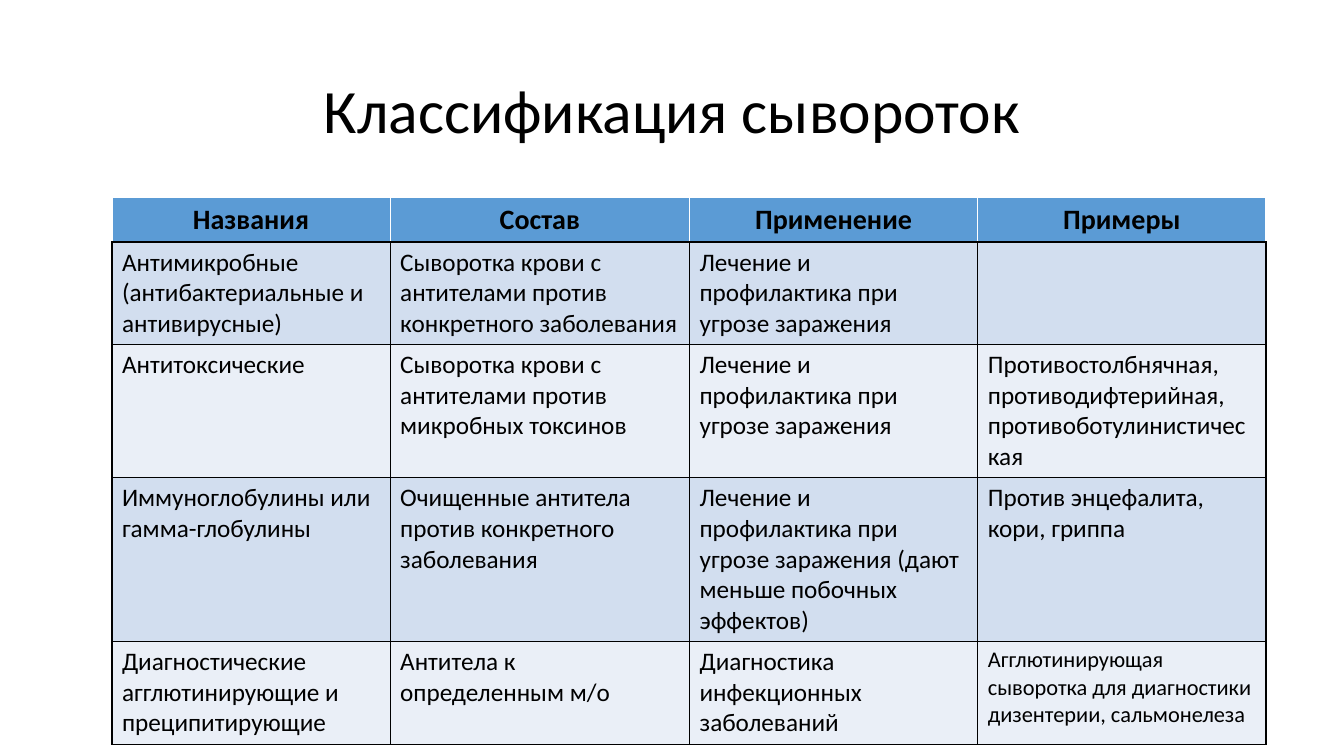
from lxml import etree
from pptx import Presentation
from pptx.dml.color import RGBColor
from pptx.enum.text import MSO_ANCHOR, PP_ALIGN
from pptx.oxml.ns import qn
from pptx.util import Inches, Pt

CENTER, LEFT = PP_ALIGN.CENTER, PP_ALIGN.LEFT
MIDDLE = MSO_ANCHOR.MIDDLE
BLACK = RGBColor(0x00, 0x00, 0x00)
WHITE = RGBColor(0xFF, 0xFF, 0xFF)
HEADER_BLUE = RGBColor(0x5B, 0x9B, 0xD5)
BAND_DARK = RGBColor(0xD2, 0xDE, 0xEF)
BAND_LIGHT = RGBColor(0xEA, 0xEF, 0xF7)

TITLE_LAYOUT = 5
GRID_COLUMNS, GRID_ROWS = 100, 75
COLUMN_WIDTHS = [20.7, 22.28, 21.45, 21.45]
ROW_HEIGHTS = [4.4, 10.1, 13.2, 16.2, 10.2]
SERUMS = [
    ["Названия", "Состав", "Применение", "Примеры"],
    ["Антимикробные (антибактериальные и антивирусные)",
     "Сыворотка крови с антителами против конкретного заболевания",
     "Лечение и профилактика при угрозе заражения", ""],
    ["Антитоксические",
     "Сыворотка крови с антителами против микробных токсинов",
     "Лечение и профилактика при угрозе заражения",
     "Противостолбнячная, противодифтерийная, противоботулинистическая"],
    ["Иммуноглобулины или гамма-глобулины",
     "Очищенные антитела против конкретного заболевания",
     "Лечение и профилактика при угрозе заражения (дают меньше побочных эффектов)",
     "Против энцефалита, кори, гриппа"],
    ["Диагностические агглютинирующие и преципитирующие",
     "Антитела к определенным м/о",
     "Диагностика инфекционных заболеваний",
     "Агглютинирующая сыворотка для диагностики дизентерии, сальмонелеза"],
]
SMALL_CELL = (4, 3)


class SlideBuilder:
    """Holds the slide, its grid and the text style."""

    def __init__(self, presentation):
        self.slide = presentation.slides.add_slide(presentation.slide_layouts[TITLE_LAYOUT])
        self.column = presentation.slide_width / GRID_COLUMNS
        self.row = presentation.slide_height / GRID_ROWS
        self.style = {"name": "Calibri", "size": Pt(18), "bold": False}

    def area(self, left, top, width, height):
        """Turn grid units into slide lengths."""
        return (round(left * self.column), round(top * self.row),
                round(width * self.column), round(height * self.row))

    def set_text(self, frame, text, alignment, **changes):
        frame.text = text
        paragraph = frame.paragraphs[0]
        paragraph.alignment = alignment
        font = paragraph.runs[0].font if paragraph.runs else paragraph.font
        for name, value in {**self.style, **changes}.items():
            setattr(font, name, value)
        font.color.rgb = BLACK

    def title(self, text, *place):
        title = self.slide.shapes.title
        for name, value in zip(("left", "top", "width", "height"), self.area(*place)):
            setattr(title, name, value)
        title.text_frame.vertical_anchor = MIDDLE
        self.set_text(title.text_frame, text, CENTER, size=Pt(44))
        title.text_frame.paragraphs[0].line_spacing = 0.9

    def borders(self, cell, side_color, bottom_color):
        properties = cell._tc.get_or_add_tcPr()
        colors = {"L": side_color, "R": side_color, "T": side_color, "B": bottom_color}
        for position, (side, color) in enumerate(colors.items()):
            line = etree.Element(qn(f"a:ln{side}"), w=str(Pt(1)))
            fill = etree.SubElement(line, qn("a:solidFill"))
            etree.SubElement(fill, qn("a:srgbClr"), val=str(color))
            properties.insert(position, line)

    def table(self, rows, left, top):
        place = self.area(left, top, sum(COLUMN_WIDTHS), sum(ROW_HEIGHTS))
        table = self.slide.shapes.add_table(len(rows), len(rows[0]), *place).table
        for column, width in zip(table.columns, COLUMN_WIDTHS):
            column.width = round(width * self.column)
        for row_index, (row, height) in enumerate(zip(table.rows, ROW_HEIGHTS)):
            row.height = round(height * self.row)
            for column_index, cell in enumerate(row.cells):
                self.cell(cell, rows[row_index][column_index], row_index, column_index)

    def cell(self, cell, text, row_index, column_index):
        cell.fill.solid()
        if row_index == 0:
            cell.fill.fore_color.rgb = HEADER_BLUE
            self.set_text(cell.text_frame, text, CENTER, size=Pt(20), bold=True)
            self.borders(cell, WHITE, BLACK)
        else:
            cell.fill.fore_color.rgb = BAND_DARK if row_index % 2 else BAND_LIGHT
            size = Pt(16) if (row_index, column_index) == SMALL_CELL else Pt(18)
            self.set_text(cell.text_frame, text, LEFT, size=size)
            self.borders(cell, BLACK, BLACK)


def main():
    presentation = Presentation()
    presentation.slide_width = Inches(13.33)
    presentation.slide_height = Inches(7.5)
    builder = SlideBuilder(presentation)
    builder.title("Классификация сывороток", 6.9, 4, 86.25, 14.5)
    builder.table(SERUMS, 8.33, 19.6)
    presentation.save("out.pptx")


if __name__ == "__main__":
    main()
